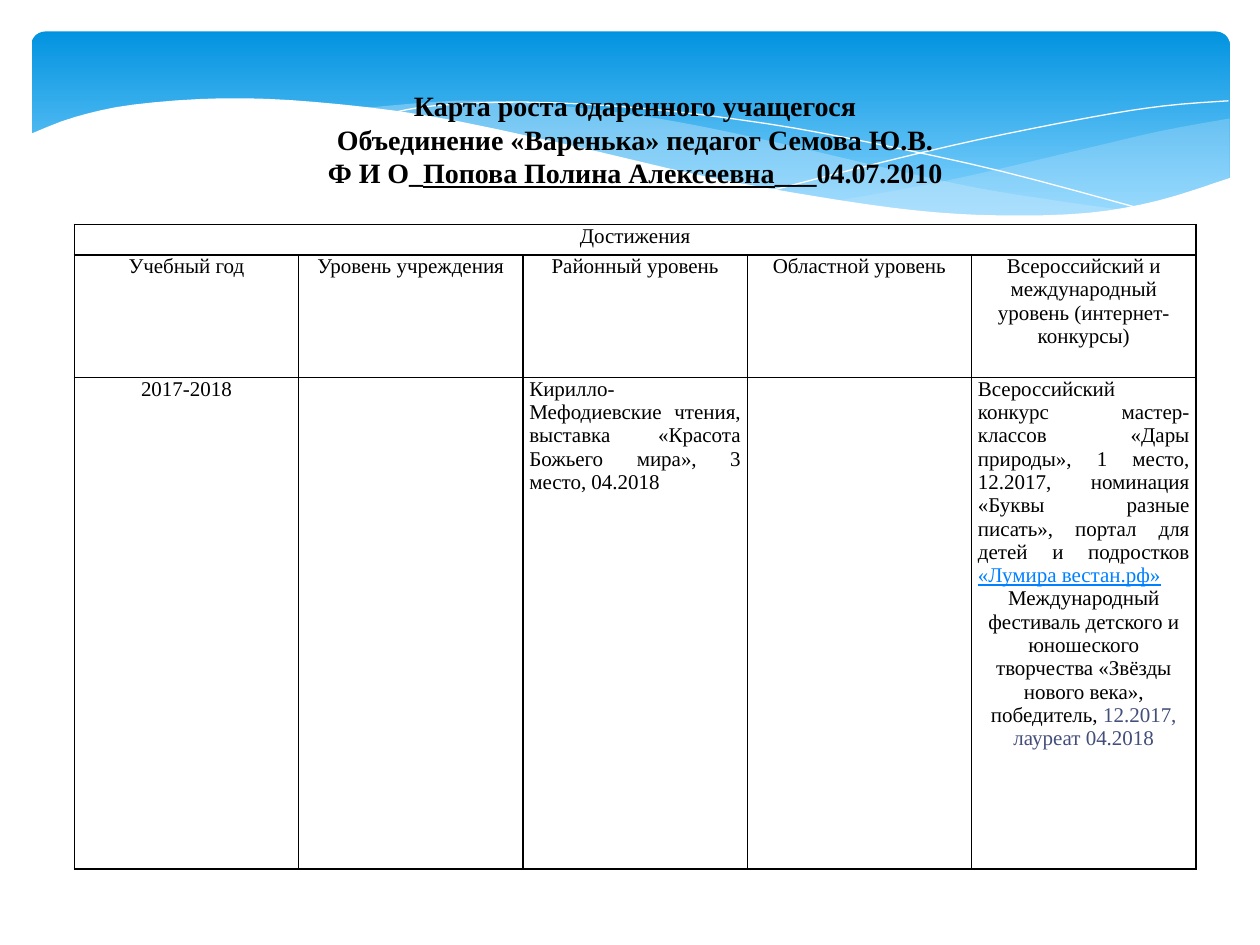
from lxml.etree import SubElement
from pptx import Presentation
from pptx.dml.color import RGBColor
from pptx.enum.shapes import MSO_SHAPE
from pptx.enum.text import MSO_ANCHOR, PP_ALIGN
from pptx.oxml.ns import qn
from pptx.util import Pt

FONT = "Times New Roman"
COLORS = {
    "text": "000000", "link": "0080FF", "date": "434E7A", "white": "FFFFFF",
    "sky_top": "0293E0", "sky_bottom": "83D3FE", "wave": "C6E7FC",
}

WAVE_EDGE = [(16.5, 77), (42.5, 67), (76.3, 59.8), (127.4, 56.2), (180, 58.3),
             (244.8, 66.2), (321.8, 82.1), (399.6, 100.1), (466.6, 112.3),
             (522.7, 120.2), (571, 123.1), (621.4, 121.7), (662.4, 114.5),
             (703.4, 101.5)]
RIGHT_TOP = [(702.7, 67.7), (663.1, 74.9), (619.9, 85), (542.2, 103), (475.9, 115.2)]
RIGHT_BOTTOM = [(475.9, 115.2), (527, 121), (578.2, 123.8), (627.8, 121.7),
                (668.2, 113.8), (702.7, 101.5)]
BAND_TOP = [(643, 120.2), (602.6, 114.5), (558, 107.3), (508.3, 96.5),
            (452.9, 83.5), (399.6, 72), (352.1, 64.1), (302.4, 59),
            (259.9, 57.6), (205.9, 61.9)]
BAND_BOTTOM = [(205.9, 61.9), (260.6, 69.8), (323.3, 83.5), (407.5, 103),
               (478.8, 115.9), (538.6, 122.4), (589, 124.6), (643, 120.2)]
FALLING_LINE = [(222.5, 64.8), (247.7, 60.5), (299.5, 58.3), (367.2, 61.9),
                (437.8, 70.6), (500.4, 82.1), (572.4, 97.9), (653, 119.5)]
RISING_LINE = [(441.4, 108.7), (500.4, 93.6), (558.7, 79.9), (623.5, 67),
               (665.3, 60.5), (702, 57.6)]

TITLE = [
    [("Карта роста одаренного учащегося", False)],
    [("Объединение «Варенька» педагог Семова Ю.В.", False)],
    [("Ф И О_", False), ("Попова Полина Алексеевна", True), ("___04.07.2010", False)],
]
HEADERS = ["Учебный год", "Уровень учреждения", "Районный уровень", "Областной уровень",
           "Всероссийский и международный уровень (интернет-конкурсы)"]
DISTRICT = "Кирилло-Мефодиевские чтения, выставка «Красота Божьего мира», 3 место, 04.2018"
CONTEST = ("Всероссийский конкурс мастер-классов «Дары природы», 1 место, 12.2017, "
           "номинация «Буквы разные писать», портал для детей и подростков ")
FESTIVAL = ("Международный фестиваль детского и юношеского творчества "
            "«Звёзды нового века», победитель, ")


def rgb(name):
    return RGBColor.from_string(COLORS[name])


def smooth(points, steps=4):
    """Return points along a Catmull-Rom curve through the given ones."""
    ends = [points[0], *points, points[-1]]
    curve = [points[0]]
    for a, b, c, d in zip(ends, ends[1:], ends[2:], ends[3:]):
        for t in (i / steps for i in range(1, steps + 1)):
            curve.append(tuple(
                (2 * q + (r - p) * t + (2 * p - 5 * q + 4 * r - s) * t ** 2
                 + (3 * q - p - 3 * r + s) * t ** 3) / 2
                for p, q, r, s in zip(a, b, c, d)))
    return curve


def add_outline(slide, points, close):
    points = [(Pt(x), Pt(y)) for x, y in points]
    builder = slide.shapes.build_freeform(*points[0])
    builder.add_line_segments(points[1:], close=close)
    sp = builder.convert_to_shape()
    sp.shadow.inherit = False
    return sp


def add_area(slide, points, color, opacity=100):
    sp = add_outline(slide, points, True)
    sp.fill.solid()
    sp.fill.fore_color.rgb = rgb(color)
    sp.line.fill.background()
    if opacity < 100:
        clr = sp.fill._xPr.find(qn("a:solidFill"))[0]
        SubElement(clr, qn("a:alpha"), val=str(opacity * 1000))


def add_hairline(slide, points):
    sp = add_outline(slide, smooth(points), False)
    sp.fill.background()
    sp.line.color.rgb = rgb("white")
    sp.line.width = Pt(0)


def add_sky(slide):
    sp = slide.shapes.add_shape(MSO_SHAPE.ROUNDED_RECTANGLE, Pt(18), Pt(18), Pt(684.7), Pt(112.3))
    sp.adjustments[0] = 0.07
    sp.shadow.inherit = False
    sp.line.fill.background()
    sp.fill.gradient()
    sp.fill.gradient_angle = 270
    stops = zip(sp.fill.gradient_stops, ("sky_top", "sky_bottom"), (0, 0.9))
    for stop, color, position in stops:
        stop.color.rgb = rgb(color)
        stop.position = position


def add_run(p, text, size, color="text", bold=False, underline=False):
    r = p.add_run()
    r.text = text
    r.font.name = FONT
    r.font.size = Pt(size)
    r.font.bold = bold
    r.font.underline = underline
    r.font.color.rgb = rgb(color)


def add_title(slide):
    tf = slide.shapes.add_textbox(Pt(54), Pt(45.4), Pt(617.8), Pt(94.3)).text_frame
    tf.word_wrap = True
    tf.vertical_anchor = MSO_ANCHOR.MIDDLE
    tf.margin_bottom = Pt(30)
    for i, runs in enumerate(TITLE):
        p = tf.add_paragraph() if i else tf.paragraphs[0]
        p.alignment = PP_ALIGN.CENTER
        for text, underline in runs:
            add_run(p, text, 16, bold=True, underline=underline)


def style_cell(cell):
    cell.fill.background()
    cell.margin_left = cell.margin_right = Pt(3.6)
    cell.margin_top = cell.margin_bottom = 0
    tcPr = cell._tc.get_or_add_tcPr()
    for i, side in enumerate(("a:lnL", "a:lnR", "a:lnT", "a:lnB")):
        ln = tcPr.makeelement(qn(side), {"w": str(Pt(1))})
        fill = SubElement(ln, qn("a:solidFill"))
        SubElement(fill, qn("a:srgbClr"), val=COLORS["text"])
        tcPr.insert(i, ln)


def write_cell(cell, *runs, align=PP_ALIGN.CENTER, new_paragraph=False):
    """Write runs, each a (text, color) pair, as one paragraph."""
    tf = cell.text_frame
    p = tf.add_paragraph() if new_paragraph else tf.paragraphs[0]
    p.alignment = align
    for text, color in runs:
        add_run(p, text, 12, color, underline=color == "link")


def add_achievements(slide):
    heights = [17.5, 70, 281]
    table = slide.shapes.add_table(
        3, 5, Pt(42.5), Pt(128.2), Pt(641), Pt(sum(heights))).table
    table.first_row = table.horz_banding = False
    for row, height in zip(table.rows, heights):
        row.height = Pt(height)
    for column in table.columns:
        column.width = Pt(128.2)
    for cell in table.iter_cells():
        style_cell(cell)
    table.cell(0, 0).merge(table.cell(0, 4))
    write_cell(table.cell(0, 0), ("Достижения", "text"))
    for i, header in enumerate(HEADERS):
        write_cell(table.cell(1, i), (header, "text"))
    write_cell(table.cell(2, 0), ("2017-2018", "text"))
    write_cell(table.cell(2, 2), (DISTRICT, "text"), align=PP_ALIGN.JUSTIFY)
    results = table.cell(2, 4)
    write_cell(results, (CONTEST, "text"), ("«Лумира вестан.рф»", "link"),
               align=PP_ALIGN.JUSTIFY)
    write_cell(results, (FESTIVAL, "text"), ("12.2017, лауреат 04.2018", "date"),
               new_paragraph=True)


def main():
    prs = Presentation()
    prs.slide_width, prs.slide_height = Pt(720), Pt(540)
    slide = prs.slides.add_slide(prs.slide_layouts[6])
    add_sky(slide)
    add_area(slide, smooth(RIGHT_TOP) + smooth(RIGHT_BOTTOM), "wave", 29)
    add_area(slide, smooth(BAND_TOP) + smooth(BAND_BOTTOM), "wave", 40)
    add_hairline(slide, FALLING_LINE)
    add_hairline(slide, RISING_LINE)
    add_area(slide, smooth(WAVE_EDGE) + [(703.4, 161), (16.5, 161)], "white")
    add_achievements(slide)
    add_title(slide)
    prs.save("out.pptx")


if __name__ == "__main__":
    main()
